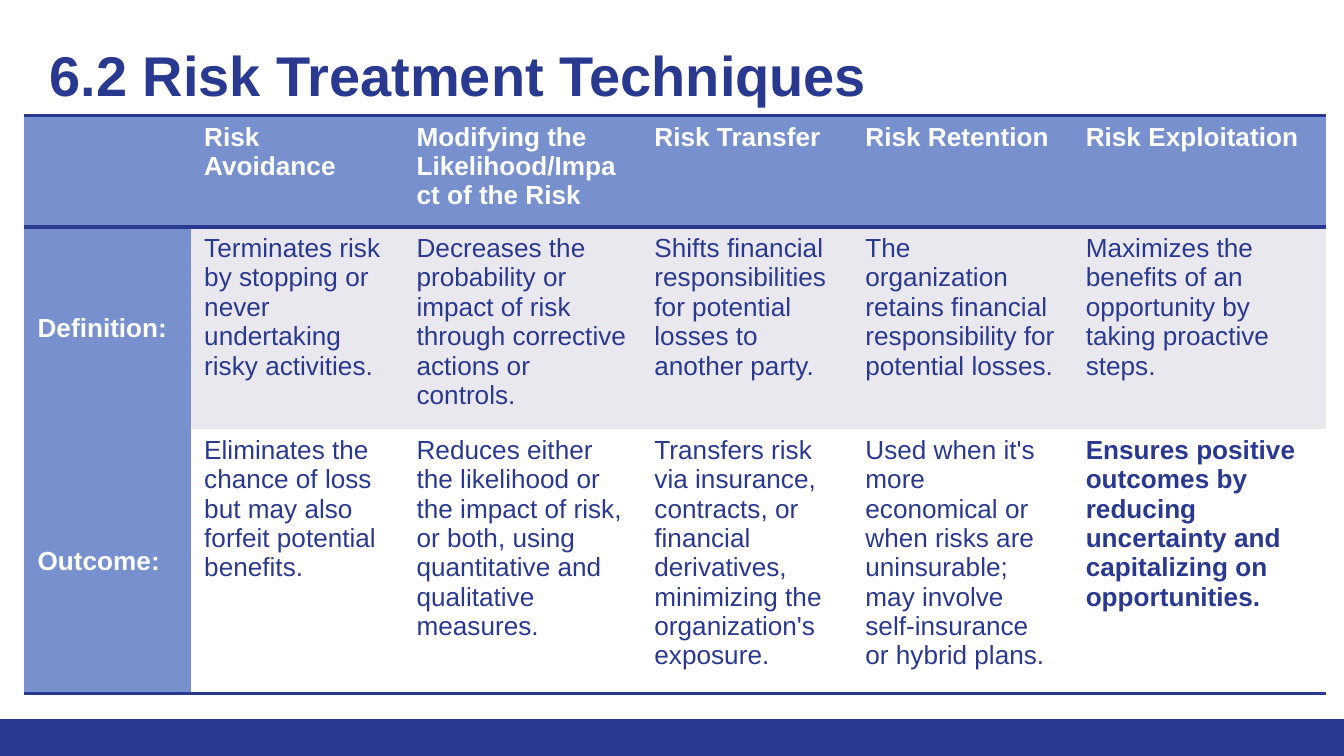
"""Build the risk treatment techniques slide."""
import pptx
import pptx.util
import pptx.dml.color
import pptx.enum.text
import pptx.enum.shapes
import pptx.oxml
import pptx.oxml.ns

Inches, Pt = pptx.util.Inches, pptx.util.Pt
Anchor = pptx.enum.text.MSO_ANCHOR

COLORS = {"navy": "2A3990", "blue": "7890CD", "gray": "E8E8EE", "white": "FFFFFF"}
FONT = "Arial"
PLAIN = "{2D5ABB26-0587-4C30-8999-92F81FD0307C}"
TITLE = "6.2 Risk Treatment Techniques"
ROWS = [
    ["", "Risk Avoidance", "Modifying the Likelihood/Impact of the Risk",
     "Risk Transfer", "Risk Retention", "Risk Exploitation"],
    ["Definition:",
     "Terminates risk by stopping or never undertaking risky activities.",
     "Decreases the probability or impact of risk through corrective actions or controls.",
     "Shifts financial responsibilities for potential losses to another party.",
     "The organization retains financial responsibility for potential losses.",
     "Maximizes the benefits of an opportunity by taking proactive steps."],
    ["Outcome:",
     "Eliminates the chance of loss but may also forfeit potential benefits.",
     "Reduces either the likelihood or the impact of risk, or both, using quantitative and qualitative measures.",
     "Transfers risk via insurance, contracts, or financial derivatives, minimizing the organization's exposure.",
     "Used when it's more economical or when risks are uninsurable; may involve self-insurance or hybrid plans.",
     "Ensures positive outcomes by reducing uncertainty and capitalizing on opportunities."],
]
WIDTHS = [1.24, 1.58, 1.77, 1.57, 1.64, 1.89]
HEIGHTS = [0.83, 1.4, 1.59]
BODY = ["blue", "gray", "white"]
SIDES = ["lnL", "lnR", "lnT", "lnB"]
EDGES = [("lnT", "lnB"), ("lnT",), ("lnB",)]


def color(name):
    return pptx.dml.color.RGBColor.from_string(COLORS[name])


def write(frame, text, size, ink, bold):
    run = frame.paragraphs[0].add_run()
    run.text = text
    run.font.name = FONT
    run.font.size = Pt(size)
    run.font.bold = bold
    run.font.color.rgb = color(ink)


def rule(cell, edges):
    props = cell._tc.get_or_add_tcPr()
    solid = f'<a:solidFill><a:srgbClr val="{COLORS["navy"]}"/></a:solidFill>'
    for place, side in enumerate(SIDES):
        fill = solid if side in edges else "<a:noFill/>"
        props.insert(place, pptx.oxml.parse_xml(
            f'<a:{side} {pptx.oxml.ns.nsdecls("a")} w="{Pt(2)}">{fill}</a:{side}>'))


def add_bar(slide):
    bar = slide.shapes.add_shape(
        pptx.enum.shapes.MSO_SHAPE.RECTANGLE,
        Inches(0), Inches(5.35), Inches(10), Inches(0.28))
    bar.shadow.inherit = False
    bar.fill.solid()
    bar.fill.fore_color.rgb = color("navy")
    bar.line.fill.background()


def add_title(slide):
    box = slide.shapes.add_textbox(Inches(0.27), Inches(0.2), Inches(9.2), Inches(0.89))
    frame = box.text_frame
    frame.word_wrap = True
    frame.margin_top = Inches(0.1)
    frame.vertical_anchor = Anchor.TOP
    write(frame, TITLE, 30, "navy", True)


def add_grid(slide):
    grid = slide.shapes.add_table(
        len(ROWS), len(WIDTHS), Inches(0.18), Inches(0.86), Inches(9.68), Inches(4.3))
    table = grid.table
    table._tbl.tblPr.find(pptx.oxml.ns.qn("a:tableStyleId")).text = PLAIN
    for col, width in zip(table.columns, WIDTHS):
        col.width = Inches(width)
    last = len(ROWS) - 1, len(WIDTHS) - 1
    for r, texts in enumerate(ROWS):
        table.rows[r].height = Inches(HEIGHTS[r])
        for c, text in enumerate(texts):
            cell = table.cell(r, c)
            head = r == 0 or c == 0
            cell.fill.solid()
            cell.fill.fore_color.rgb = color("blue" if head else BODY[r])
            cell.margin_left = cell.margin_right = Inches(0.1)
            cell.margin_top = cell.margin_bottom = Inches(0.05)
            cell.vertical_anchor = Anchor.MIDDLE if c == 0 else Anchor.TOP
            if text:
                write(cell.text_frame, text, 14, "white" if head else "navy",
                      head or (r, c) == last)
            rule(cell, EDGES[r])
    grid.width, grid.height = Inches(9.68), Inches(4.3)


def main():
    deck = pptx.Presentation()
    deck.slide_width = Inches(10)
    deck.slide_height = deck.slide_width * 9 // 16
    slide = deck.slides.add_slide(deck.slide_layouts[6])
    add_bar(slide)
    add_title(slide)
    add_grid(slide)
    deck.save("out.pptx")


if __name__ == "__main__":
    main()
